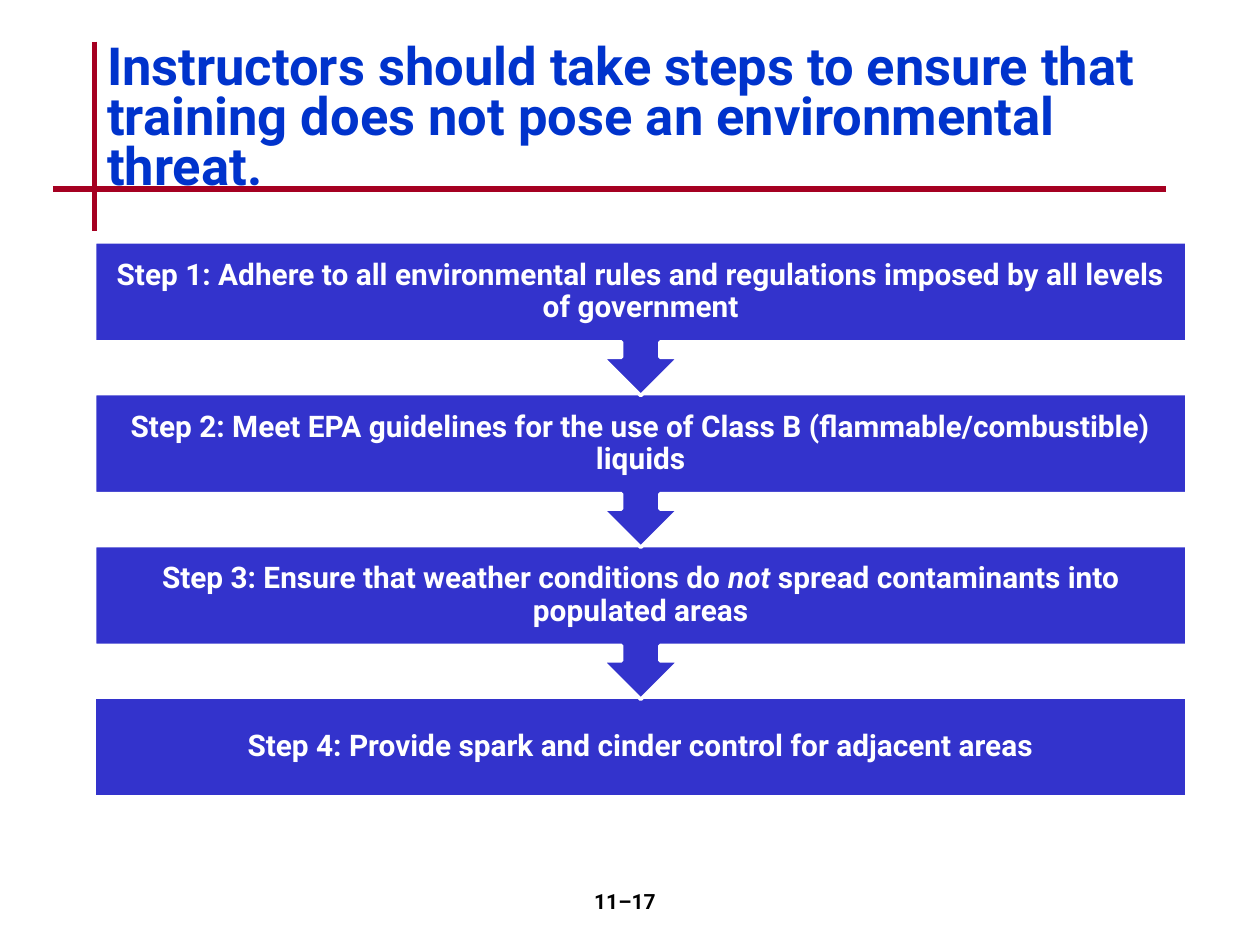
from lxml import etree
from pptx import Presentation
from pptx.dml.color import RGBColor
from pptx.enum.shapes import MSO_CONNECTOR, MSO_SHAPE
from pptx.enum.text import MSO_ANCHOR, MSO_AUTO_SIZE, PP_ALIGN
from pptx.oxml.ns import qn
from pptx.util import Inches, Pt

LINE = MSO_CONNECTOR.STRAIGHT
RECT, CALLOUT = MSO_SHAPE.RECTANGLE, MSO_SHAPE.UP_ARROW_CALLOUT
MIDDLE, TOP = MSO_ANCHOR.MIDDLE, MSO_ANCHOR.TOP
LEFT, CENTER = PP_ALIGN.LEFT, PP_ALIGN.CENTER
NO_FIT = MSO_AUTO_SIZE.NONE

RED = RGBColor(0xA5, 0x00, 0x21)
TITLE_BLUE = RGBColor(0x00, 0x33, 0xCC)
STEP_BLUE = RGBColor(0x33, 0x33, 0xCC)
WHITE = RGBColor(0xFF, 0xFF, 0xFF)
BLACK = RGBColor(0x00, 0x00, 0x00)

FONT = "Roboto"
TITLE = "Instructors should take steps to ensure that training does not pose an environmental threat."
# Each step is a list of runs; every second run is italic.
STEPS = [
    ["Step 1: Adhere to all environmental rules and regulations imposed by all levels of government"],
    ["Step 2: Meet EPA guidelines for the use of Class B (flammable/combustible) liquids"],
    ["Step 3: Ensure that weather conditions do ", "not", " spread contaminants into populated areas"],
    ["Step 4: Provide spark and cinder control for adjacent areas"],
]
STEP_LEFT, STEP_TOP, STEP_WIDTH = 0.75, 1.92, 8.67
STEP_PITCH, BOX_HEIGHT, CALLOUT_HEIGHT = 1.205, 0.79, 1.22


def write_text(sp, runs, size, color, align=CENTER, anchor=MIDDLE, spacing=1.0, inset=None):
    """Fill a shape with one bold paragraph, every second run in italics."""
    tf = sp.text_frame
    tf.word_wrap, tf.auto_size, tf.vertical_anchor = True, NO_FIT, anchor
    if inset is not None:
        for side in ("left", "right", "top", "bottom"):
            setattr(tf, f"margin_{side}", Inches(inset))
    p = tf.paragraphs[0]
    p.alignment, p.line_spacing = align, spacing
    for i, text in enumerate(runs):
        r = p.add_run()
        r.text = text
        style = {"name": FONT, "size": Pt(size), "bold": True, "italic": i % 2 == 1}
        for key, value in style.items():
            setattr(r.font, key, value)
        r.font.color.rgb = color


def add_rule(s, x1, y1, x2, y2):
    rule = s.shapes.add_connector(LINE, Inches(x1), Inches(y1), Inches(x2), Inches(y2))
    rule.line.color.rgb = RED
    rule.line.width = Pt(3)
    etree.SubElement(rule._element.spPr, qn("a:effectLst"))


def add_title(s):
    title = s.shapes.title
    title.left, title.top = Inches(0.75), Inches(0.33)
    title.width, title.height = Inches(8.5), Inches(1.25)
    write_text(title, [TITLE], 30, TITLE_BLUE, align=LEFT, spacing=0.8)


def add_step(s, top, runs, last):
    """Add a step box, with an arrow down to the next step unless it is the last."""
    left, width = Inches(STEP_LEFT), Inches(STEP_WIDTH)
    kind, height = (RECT, BOX_HEIGHT) if last else (CALLOUT, CALLOUT_HEIGHT)
    sp = s.shapes.add_shape(kind, left, Inches(top), width, Inches(height))
    sp.rotation = 0 if last else 180
    sp.shadow.inherit = False
    sp.fill.solid()
    sp.fill.fore_color.rgb = STEP_BLUE
    sp.line.color.rgb = WHITE
    sp.line.width = Pt(2)
    label = s.shapes.add_textbox(left, Inches(top), width, Inches(BOX_HEIGHT))
    write_text(label, runs, 17, WHITE, spacing=0.9, inset=0.13)


def add_page_number(s):
    box = s.shapes.add_textbox(Inches(3.92), Inches(7), Inches(2.08), Inches(0.5))
    write_text(box, ["11–17"], 12, BLACK, anchor=TOP)


def main():
    prs = Presentation()
    prs.slide_width, prs.slide_height = Inches(10), Inches(7.5)
    s = prs.slides.add_slide(prs.slide_layouts[5])
    add_rule(s, 0.75, 0.33, 0.75, 1.83)
    add_rule(s, 0.42, 1.5, 9.25, 1.5)
    # Bottom step first, so that each arrow tip lies over the box below it.
    last = len(STEPS) - 1
    for i in range(last, -1, -1):
        add_step(s, STEP_TOP + i * STEP_PITCH, STEPS[i], i == last)
    add_title(s)
    add_page_number(s)
    prs.save("out.pptx")


if __name__ == "__main__":
    main()
